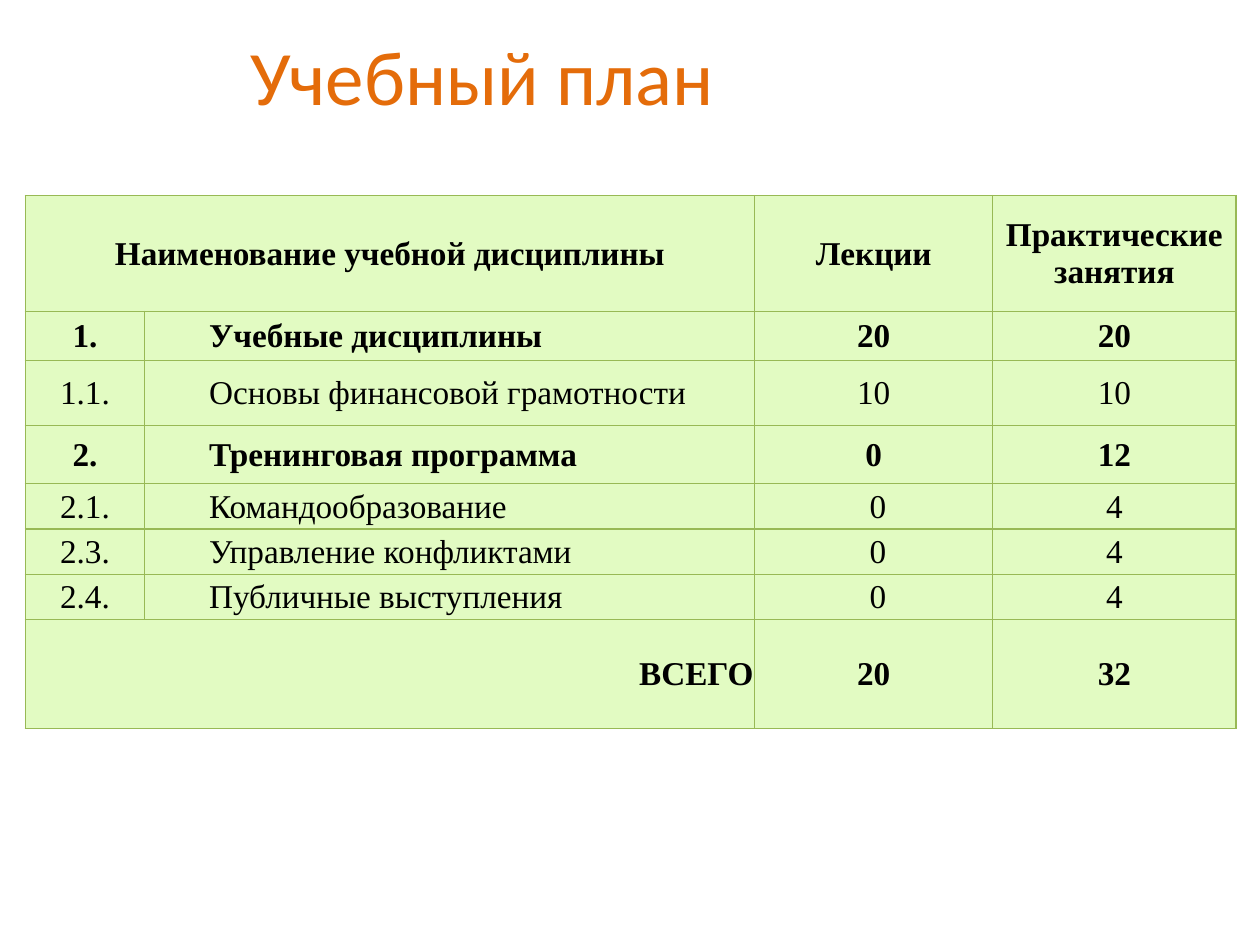
from lxml.etree import SubElement as Sub
from pptx import Presentation
from pptx.dml.color import RGBColor as Rgb
from pptx.enum.text import MSO_ANCHOR as Anchor, PP_ALIGN as Align
from pptx.oxml.ns import qn
from pptx.util import Inches, Pt

HUES = {"title": "E46C0A", "text": "000000", "fill": "E2FBC2", "line": "98B955"}
COLS = [0.95, 4.84, 1.89, 1.93]
ROWS = [0.92, 0.39, 0.52, 0.46, 0.36, 0.36, 0.36, 0.86]
PLAN = [
    ("Наименование учебной дисциплины", "", "Лекции", "Практические занятия"),
    ("1.", "Учебные дисциплины", "20", "20"),
    ("1.1.", "Основы финансовой грамотности", "10", "10"),
    ("2.", "Тренинговая программа", "0", "12"),
    ("2.1.", "Командообразование", " 0", "4"),
    ("2.3.", "Управление конфликтами", " 0", "4"),
    ("2.4.", "Публичные выступления", " 0", "4"),
    ("ВСЕГО", "", "20", "32"),
]
BOLD = {0, 1, 3, 7}
LAST = len(PLAN) - 1


def write(frame, text, size=19, face="Times New Roman", hue="text",
          bold=False, align=Align.CENTER, indent=0):
    para = frame.paragraphs[0]
    para.alignment = align
    if indent:
        props = para._p.get_or_add_pPr()
        props.set("marL", "0")
        props.set("indent", str(Inches(indent)))
    run = para.add_run()
    run.text = text
    font = run.font
    font.size, font.name, font.bold = Pt(size), face, bold
    font.color.rgb = Rgb.from_string(HUES[hue])


def style(cell):
    """Set the margins, thin borders and fill of a table cell."""
    cell.vertical_anchor = Anchor.MIDDLE
    cell.margin_left = cell.margin_right = cell.margin_top = Inches(0.01)
    cell.margin_bottom = 0
    props = cell._tc.get_or_add_tcPr()
    for side in ("lnL", "lnR", "lnT", "lnB"):
        line = Sub(props, qn(f"a:{side}"), w=str(Pt(0.75)))
        Sub(Sub(line, qn("a:solidFill")), qn("a:srgbClr"), val=HUES["line"])
    cell.fill.solid()
    cell.fill.fore_color.rgb = Rgb.from_string(HUES["fill"])


deck = Presentation()
deck.slide_width, deck.slide_height = Inches(10), Inches(7.5)
slide = deck.slides.add_slide(deck.slide_layouts[5])

title = slide.shapes.title
title.left, title.top = Inches(0.67), Inches(-0.03)
title.width, title.height = Inches(6.32), Inches(1.25)
title.text_frame.vertical_anchor = Anchor.MIDDLE
write(title.text_frame, "Учебный план", size=44, face="Calibri", hue="title")

table = slide.shapes.add_table(
    len(ROWS), len(COLS), Inches(0.2), Inches(1.55),
    Inches(sum(COLS)), Inches(sum(ROWS))).table
table.first_row = table.horz_banding = False
for col, width in zip(table.columns, COLS):
    col.width = Inches(width)
for row, height in zip(table.rows, ROWS):
    row.height = Inches(height)
for r in (0, LAST):
    table.cell(r, 0).merge(table.cell(r, 1))

for r, texts in enumerate(PLAN):
    for c, text in enumerate(texts):
        cell = table.cell(r, c)
        style(cell)
        if cell.is_spanned:
            continue
        align = Align.CENTER
        if c == 1:
            align = Align.LEFT
        elif c == 0 and r == LAST:
            align = Align.RIGHT
        write(cell.text_frame, text, bold=r in BOLD, align=align,
              indent=0.5 if c == 1 else 0)

deck.save("out.pptx")
